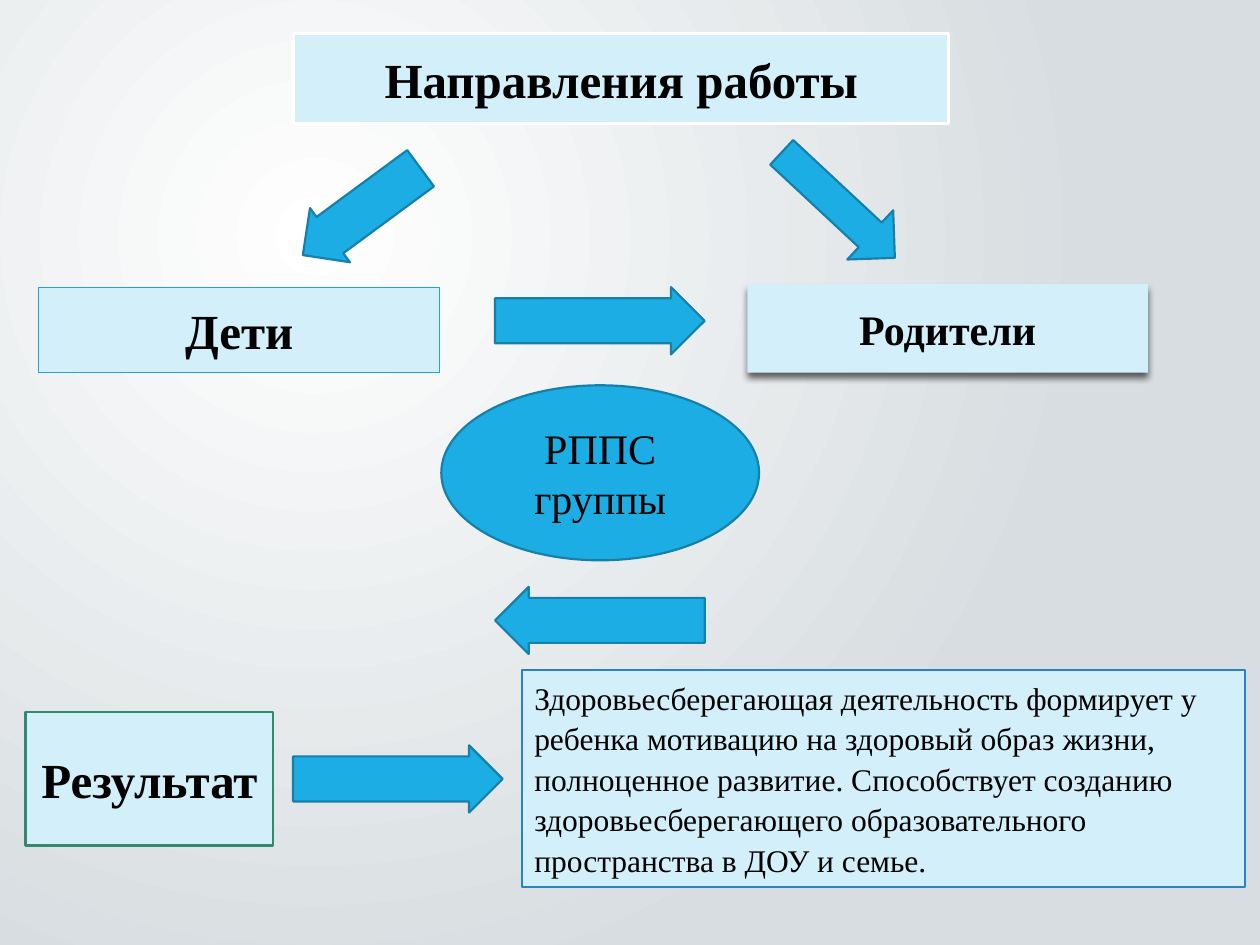
import dataclasses
import typing

import lxml.etree
import pptx
import pptx.dml.color
import pptx.enum.shapes
import pptx.enum.text
import pptx.oxml.ns
import pptx.util

Pt = pptx.util.Pt
Kind = pptx.enum.shapes.MSO_SHAPE
Align = pptx.enum.text.PP_ALIGN
Anchor = pptx.enum.text.MSO_ANCHOR
Fit = pptx.enum.text.MSO_AUTO_SIZE


@dataclasses.dataclass(frozen=True)
class Theme:
    font: str = "Times New Roman"
    ink: str = "000000"
    pale: str = "D2EFFA"
    blue: str = "1CADE4"
    edge: str = "1580A9"
    white: str = "FFFFFF"
    sky: str = "1BA5DA"
    navy: str = "2683C6"
    green: str = "318A70"
    gray: str = "D7DDE0"
    large: float = 28
    mid: float = 24
    small: float = 18


THEME = Theme()


@dataclasses.dataclass(frozen=True)
class Box:
    text: str
    left: float
    top: float
    width: float
    height: float
    size: float = THEME.large
    line: typing.Optional[str] = None
    weight: float = 1.25
    kind: Kind = Kind.RECTANGLE
    fill: str = THEME.pale
    bold: bool = True
    align: Align = Align.CENTER
    anchor: Anchor = Anchor.MIDDLE
    fit: Fit = Fit.NONE
    lead: float = 1.0
    shade: bool = False


@dataclasses.dataclass(frozen=True)
class Arrow:
    left: float
    top: float
    width: float
    height: float
    turn: float
    kind: Kind = Kind.DOWN_ARROW
    neck: float = 0.67


RESULT = (
    "Здоровьесберегающая деятельность формирует у ребенка мотивацию "
    "на здоровый образ жизни, полноценное развитие. Способствует "
    "созданию здоровьесберегающего образовательного "
    "пространства в ДОУ и семье."
)

BOXES = [
    Box("Направления работы", 167.8, 19.4, 374.4, 51.1,
        line=THEME.white, weight=1.75),
    Box("Родители", 427, 162.4, 229, 50.6, size=THEME.mid, shade=True),
    Box("Дети", 22.2, 164.2, 229, 48.8, line=THEME.sky, weight=0.75),
    Box(RESULT, 298.2, 383, 413.2, 123.8, size=THEME.small,
        line=THEME.navy, bold=False, align=Align.LEFT, anchor=Anchor.TOP,
        fit=Fit.SHAPE_TO_FIT_TEXT, lead=1.07),
    Box("Результат", 14.6, 406.8, 141.6, 76.4, line=THEME.green),
    Box("РППС\nгруппы", 252.2, 220.2, 181.6, 100, size=THEME.mid,
        line=THEME.edge, kind=Kind.OVAL, fill=THEME.blue, bold=False),
]

THICK, LONG = 38.4, 119.8
ARROWS = [
    Arrow(434.8, 98, 88.4, THICK, 43, Kind.RIGHT_ARROW, 0.5),
    Arrow(187.5, 79.2, THICK, 83.6, 53.6),
    Arrow(323.6, 294.6, THICK, LONG, 90),
    Arrow(323.6, 123.4, THICK, LONG, 270),
    Arrow(208.2, 385.2, THICK, LONG, 270),
]


def tint(code: str) -> pptx.dml.color.RGBColor:
    return pptx.dml.color.RGBColor.from_string(code)


def apply(thing: typing.Any, form: dict) -> None:
    for name, value in form.items():
        setattr(thing, name, value)


def add(root: typing.Any, tag: str, **attrs: str) -> typing.Any:
    return lxml.etree.SubElement(root, pptx.oxml.ns.qn(tag), attrs)


def form(slide: typing.Any, item: typing.Union[Box, Arrow], fill: str,
         line: typing.Optional[str], weight: float) -> typing.Any:
    place = (item.left, item.top, item.width, item.height)
    shape = slide.shapes.add_shape(item.kind, *map(Pt, place))
    shape.shadow.inherit = False
    shape.fill.solid()
    shape.fill.fore_color.rgb = tint(fill)
    if line:
        shape.line.color.rgb = tint(line)
        shape.line.width = Pt(weight)
    else:
        shape.line.fill.background()
    return shape


def shade(shape: typing.Any) -> None:
    root = shape.element.spPr.find(pptx.oxml.ns.qn("a:effectLst"))
    cast = add(root, "a:outerShdw", blurRad=str(Pt(4)), dist=str(Pt(3)),
               dir="5400000", algn="ctr", rotWithShape="0")
    ink = add(cast, "a:srgbClr", val=THEME.ink)
    add(ink, "a:alpha", val="60000")


def draw_box(slide: typing.Any, box: Box) -> None:
    shape = form(slide, box, box.fill, box.line, box.weight)
    if box.shade:
        shade(shape)
    frame = shape.text_frame
    frame.text = box.text
    apply(frame, {"word_wrap": True, "auto_size": box.fit,
                  "vertical_anchor": box.anchor})
    for para in frame.paragraphs:
        apply(para, {"alignment": box.align, "line_spacing": box.lead})
        for run in para.runs:
            apply(run.font, {"name": THEME.font, "size": Pt(box.size),
                             "bold": box.bold})
            run.font.color.rgb = tint(THEME.ink)


def draw_arrow(slide: typing.Any, arrow: Arrow) -> None:
    shape = form(slide, arrow, THEME.blue, THEME.edge, 1.25)
    shape.rotation = arrow.turn
    shape.adjustments[0] = arrow.neck
    shape.adjustments[1] = 0.5


def paint(slide: typing.Any) -> None:
    fill = slide.background.fill
    fill.gradient()
    for stop, code in zip(fill.gradient_stops, (THEME.white, THEME.gray)):
        stop.color.rgb = tint(code)
    grad = slide.element.find(".//" + pptx.oxml.ns.qn("a:gradFill"))
    grad.remove(grad.find(pptx.oxml.ns.qn("a:lin")))
    round_ = add(grad, "a:path", path="circle")
    add(round_, "a:fillToRect", l="50000", t="50000", r="100000", b="100000")


def main() -> None:
    deck = pptx.Presentation()
    apply(deck, {"slide_width": Pt(720), "slide_height": Pt(540)})
    slide = deck.slides.add_slide(deck.slide_layouts[6])
    paint(slide)
    for box in BOXES:
        draw_box(slide, box)
    for arrow in ARROWS:
        draw_arrow(slide, arrow)
    deck.save("out.pptx")


if __name__ == "__main__":
    main()
